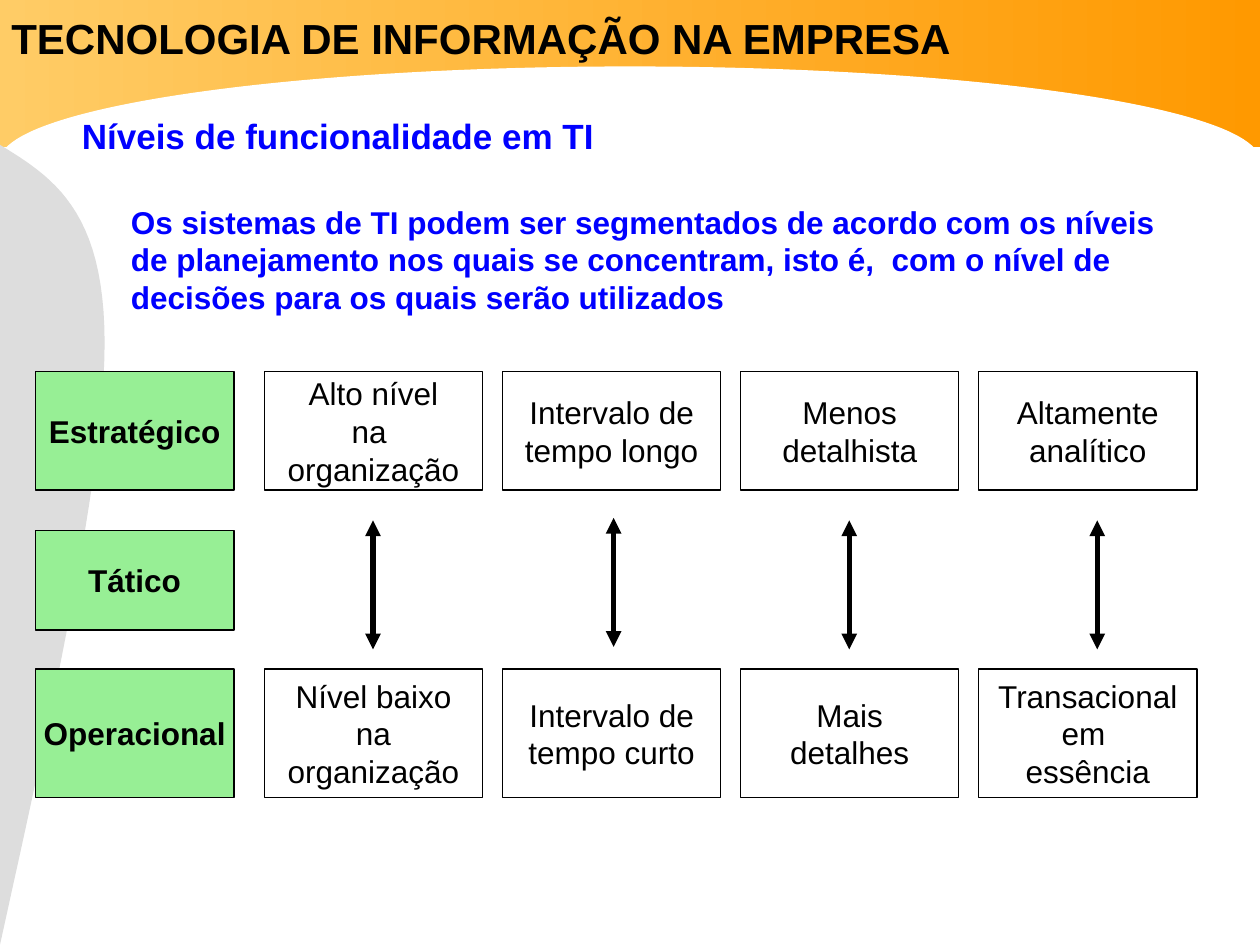
from lxml import etree
from pptx import Presentation
from pptx.dml.color import RGBColor
from pptx.enum.shapes import MSO_CONNECTOR, MSO_SHAPE
from pptx.enum.text import MSO_ANCHOR, MSO_AUTO_SIZE, PP_ALIGN
from pptx.oxml.ns import qn
from pptx.util import Cm, Pt

RECTANGLE, MOON = MSO_SHAPE.RECTANGLE, MSO_SHAPE.MOON
STRAIGHT = MSO_CONNECTOR.STRAIGHT
CENTER, LEFT = PP_ALIGN.CENTER, PP_ALIGN.LEFT
MIDDLE, TOP = MSO_ANCHOR.MIDDLE, MSO_ANCHOR.TOP
GROW = MSO_AUTO_SIZE.SHAPE_TO_FIT_TEXT

BLACK, BLUE, WHITE = "000000", "0000FF", "FFFFFF"
GREEN, GRAY = "97EF95", "DDDDDD"
LIGHT_ORANGE, ORANGE = "FFCC66", "FF9900"


def color(value):
    return RGBColor.from_string(value)


def bezier(start, control_1, control_2, end, steps=24):
    """Points along a cubic curve, without its start."""
    points = []
    for step in range(1, steps + 1):
        t = step / steps
        weights = ((1 - t) ** 3, 3 * t * (1 - t) ** 2, 3 * t * t * (1 - t), t ** 3)
        corners = (start, control_1, control_2, end)
        points.append(tuple(sum(w * corner[axis] for w, corner in zip(weights, corners))
                            for axis in (0, 1)))
    return points


class SlideBuilder:
    font_name = "Arial"

    def __init__(self, slide):
        self.slide = slide
        self.shapes = slide.shapes

    def add_lines(self, frame, lines, size, font_color, bold, align=LEFT):
        font_format = {"name": self.font_name, "size": Pt(size), "bold": bold}
        for index, line in enumerate(lines):
            paragraph = frame.paragraphs[0] if index == 0 else frame.add_paragraph()
            paragraph.alignment = align
            run = paragraph.add_run()
            run.text = line
            for name, value in font_format.items():
                setattr(run.font, name, value)
            run.font.color.rgb = color(font_color)

    def text(self, position, content, size, font_color, inset=None):
        shape = self.shapes.add_textbox(*map(Cm, position))
        frame = shape.text_frame
        frame_format = {"word_wrap": True, "auto_size": GROW, "vertical_anchor": TOP}
        if inset is not None:
            for side in ("left", "top", "right", "bottom"):
                frame_format[f"margin_{side}"] = Cm(inset)
        for name, value in frame_format.items():
            setattr(frame, name, value)
        self.add_lines(frame, [content], size, font_color, True)

    def fill(self, shape, fill_color):
        shape.shadow.inherit = False
        shape.line.fill.background()
        if fill_color is None:
            shape.fill.background()
        else:
            shape.fill.solid()
            shape.fill.fore_color.rgb = color(fill_color)

    def decoration(self, kind, position, fill_color):
        shape = self.shapes.add_shape(kind, *map(Cm, position))
        self.fill(shape, fill_color)
        return shape

    def gradient_band(self, position, stops):
        shape = self.decoration(RECTANGLE, position, stops[0])
        shape.fill.gradient()
        shape.fill.gradient_angle = 0
        for stop, stop_color in zip(shape.fill.gradient_stops, stops):
            stop.color.rgb = color(stop_color)

    def outline(self, points, fill_color):
        points = [(Cm(x), Cm(y)) for x, y in points]
        builder = self.shapes.build_freeform(*points[0])
        builder.add_line_segments(points[1:], close=True)
        self.fill(builder.convert_to_shape(), fill_color)

    def box(self, position, lines, fill_color=None, bold=False):
        shape = self.decoration(RECTANGLE, position, fill_color)
        shape.line.color.rgb = color(BLACK)
        shape.line.width = Pt(0.75)
        shape.text_frame.word_wrap = False
        shape.text_frame.vertical_anchor = MIDDLE
        self.add_lines(shape.text_frame, lines, 18, BLACK, bold, CENTER)

    def double_arrow(self, x, top, bottom):
        connector = self.shapes.add_connector(STRAIGHT, Cm(x), Cm(top), Cm(x), Cm(bottom))
        connector.line.color.rgb = color(BLACK)
        connector.line.width = Pt(3)
        properties = connector.element.spPr
        line = properties.find(qn("a:ln"))
        for end in ("a:headEnd", "a:tailEnd"):
            etree.SubElement(line, qn(end), type="triangle")
        etree.SubElement(properties, qn("a:effectLst"))


def main():
    presentation = Presentation()
    presentation.slide_width, presentation.slide_height = Cm(25.4), Cm(19.05)
    builder = SlideBuilder(presentation.slides.add_slide(presentation.slide_layouts[6]))

    # Background: orange band, white arc, gray curve
    builder.gradient_band((0, 0, 25.4, 2.97), (LIGHT_ORANGE, ORANGE))
    arc = builder.decoration(MOON, (11.75, -10.41, 1.9, 25.4), WHITE)
    arc.rotation = 90
    arc.adjustments[0] = 0.875
    start, widest, end = (0, 2.92), (2.11, 6.91), (0, 19.05)
    curve = [start]
    curve += bezier(start, (1.04, 3.56), (2.11, 4.22), widest)
    curve += bezier(widest, (2.11, 9.58), (1.04, 14.33), end)
    builder.outline(curve, GRAY)

    # Headings
    builder.text((0.23, 0.25, 21.49, 1.02), "TECNOLOGIA DE INFORMAÇÃO NA EMPRESA",
                 24, BLACK, inset=0)
    builder.text((1.4, 2.18, 17.2, 1.09), "Níveis de funcionalidade em TI", 20, BLUE)
    builder.text((2.39, 3.96, 21.62, 2.54),
                 "Os sistemas de TI podem ser segmentados de acordo com os níveis "
                 "de planejamento nos quais se concentram, isto é,  com o nível de "
                 "decisões para os quais serão utilizados", 18, BLUE)

    # Levels: name, top, height, features
    levels = [
        ("Estratégico", 7.49, 2.39, [
            ("Alto nível", "na ", "organização"), ("Intervalo de", "tempo longo"),
            ("Menos", "detalhista"), ("Altamente", "analítico")]),
        ("Tático", 10.69, 2.01, []),
        ("Operacional", 13.49, 2.59, [
            ("Nível baixo", "na", "organização"), ("Intervalo de", "tempo curto"),
            ("Mais", "detalhes"), ("Transacional", "em ", "essência")]),
    ]
    first_column, column_step = 5.33, 4.8
    for name, top, height, features in levels:
        builder.box((0.71, top, 4.01, height), [name], GREEN, bold=True)
        for column, lines in enumerate(features):
            builder.box((first_column + column * column_step, top, 4.4, height), lines)

    # Arrows between strategic and operational levels
    for x, top in ((7.52, 10.49), (12.37, 10.44), (17.12, 10.49), (22.12, 10.49)):
        builder.double_arrow(x, top, top + 2.6)

    presentation.save("out.pptx")


if __name__ == "__main__":
    main()
